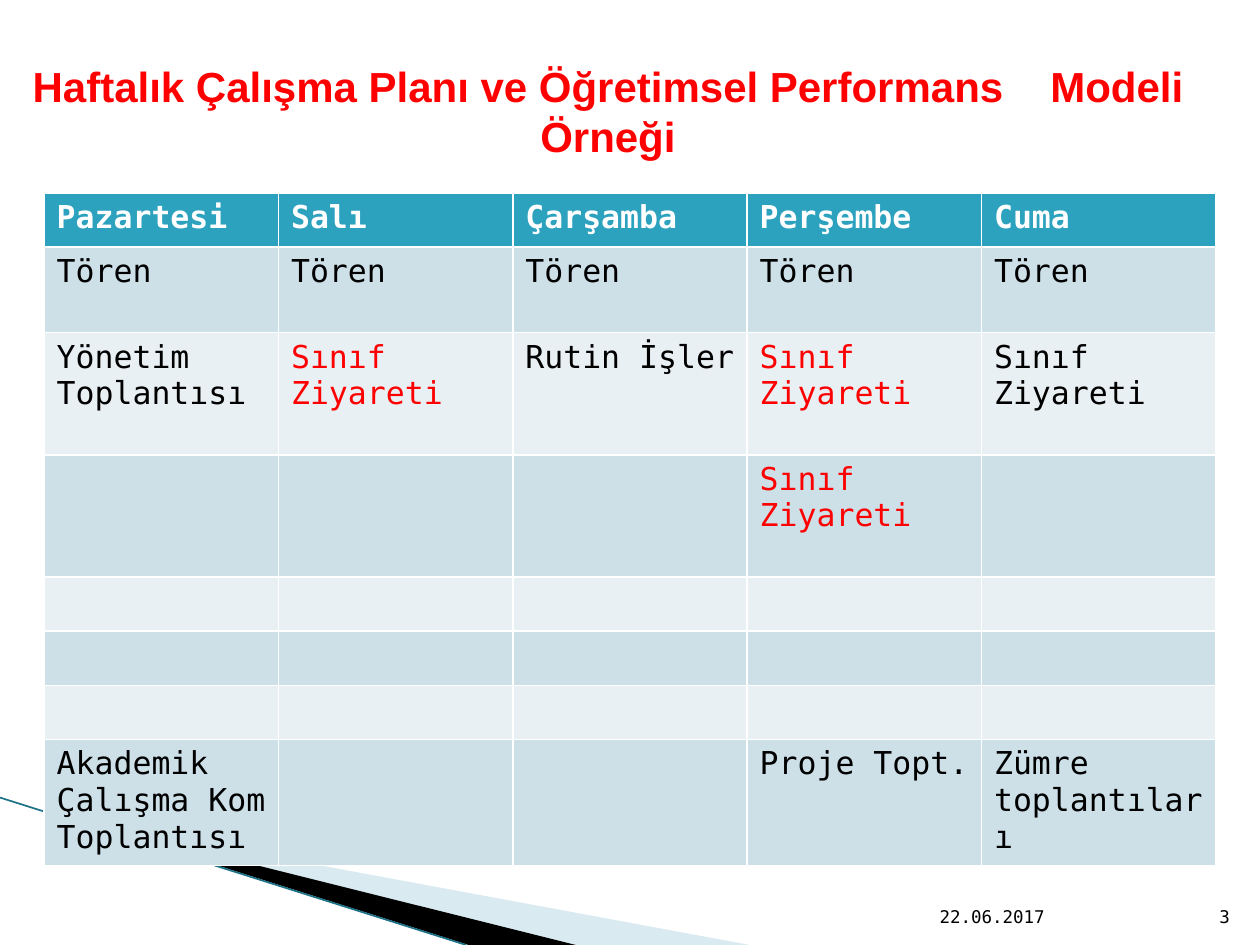
from dataclasses import dataclass

from lxml.etree import SubElement
from pptx import Presentation
from pptx.dml.color import RGBColor
from pptx.enum.shapes import MSO_CONNECTOR
from pptx.enum.text import MSO_ANCHOR, PP_ALIGN
from pptx.oxml.ns import qn
from pptx.util import Inches, Pt


@dataclass(frozen=True)
class Theme:
    header: RGBColor = RGBColor.from_string("2DA2BF")
    band_dark: RGBColor = RGBColor.from_string("CDE0E8")
    band_light: RGBColor = RGBColor.from_string("E8F0F4")
    wedge: RGBColor = RGBColor.from_string("A0CBDC")
    stripe: RGBColor = RGBColor.from_string("1C7186")
    red: RGBColor = RGBColor.from_string("FF0000")
    black: RGBColor = RGBColor.from_string("000000")
    white: RGBColor = RGBColor.from_string("FFFFFF")
    title_font: str = "Arial"
    body_font: str = "DejaVu Sans Mono"
    title_size: Pt = Pt(24)
    table_size: Pt = Pt(18)
    footer_size: Pt = Pt(10)


theme = Theme()


def style(paragraph, font_name, size, color, bold=False, align=PP_ALIGN.LEFT):
    paragraph.alignment = align
    font = paragraph.font
    font.name, font.size, font.bold = font_name, size, bold
    font.color.rgb = color


def add_text(box, text, anchor):
    frame = slide.shapes.add_textbox(*map(Inches, box)).text_frame
    frame.word_wrap = True
    frame.vertical_anchor = anchor
    paragraph = frame.paragraphs[0]
    paragraph.text = text
    return paragraph


presentation = Presentation()
presentation.slide_width, presentation.slide_height = Inches(10), Inches(7.5)
slide = presentation.slides.add_slide(presentation.slide_layouts[6])

# Corner wedges: points, fill, opacity in percent
wedges = [
    ([(0.55, 6.5), (5.95, 7.5), (4.56, 7.5)], theme.wedge, 40),
    ([(0.53, 6.49), (4.57, 7.5), (3.72, 7.5)], theme.black, 100),
]
for points, color, opacity in wedges:
    start, *rest = [(Inches(x), Inches(y)) for x, y in points]
    builder = slide.shapes.build_freeform(*start)
    builder.add_line_segments(rest, close=True)
    wedge = builder.convert_to_shape()
    wedge.shadow.inherit = False
    wedge.fill.solid()
    wedge.fill.fore_color.rgb = color
    wedge.line.fill.background()
    if opacity < 100:
        color_element = next(wedge._element.spPr.iter(qn("a:srgbClr")))
        SubElement(color_element, qn("a:alpha"), val=str(opacity * 1000))

# Corner line
corner_line = slide.shapes.add_connector(
    MSO_CONNECTOR.STRAIGHT, Inches(0), Inches(6.33), Inches(3.7), Inches(7.5))
corner_line.line.color.rgb = theme.stripe
corner_line.line.width = Pt(0.95)
SubElement(corner_line._element.spPr, qn("a:effectLst"))

# Title, with a widened gap before "Modeli"
title = add_text((0, 0.21, 9.65, 1.34),
                 "Haftalık Çalışma Planı ve Öğretimsel Performans", MSO_ANCHOR.MIDDLE)
gap = title.add_run()
gap.text = " "
gap._r.get_or_add_rPr().set("spc", "2000")
title.add_run().text = "Modeli Örneği"
style(title, theme.title_font, theme.title_size, theme.red, True, PP_ALIGN.CENTER)

# Weekly plan
plan = [
    ["Pazartesi", "Salı", "Çarşamba", "Perşembe", "Cuma"],
    ["Tören"] * 5,
    ["Yönetim Toplantısı", "Sınıf Ziyareti", "Rutin İşler", "Sınıf Ziyareti", "Sınıf Ziyareti"],
    ["", "", "", "Sınıf Ziyareti", ""],
    [""] * 5,
    [""] * 5,
    [""] * 5,
    ["Akademik Çalışma Kom Toplantısı", "", "", "Proje Topt.", "Zümre toplantıları"],
]
red_cells = {(2, 1), (2, 3), (3, 3)}
row_heights = [0.43, 0.68, 0.97, 0.97, 0.43, 0.43, 0.43, 0.97]

table = slide.shapes.add_table(
    len(plan), len(plan[0]), Inches(0.35), Inches(1.53),
    Inches(9.3), Inches(sum(row_heights))).table
for row, height in zip(table.rows, row_heights):
    row.height = Inches(height)

for row_index, entries in enumerate(plan):
    is_header = row_index == 0
    band = theme.band_dark if row_index % 2 else theme.band_light
    for column_index, entry in enumerate(entries):
        cell = table.cell(row_index, column_index)
        cell.fill.solid()
        cell.fill.fore_color.rgb = theme.header if is_header else band
        color = theme.white if is_header else theme.black
        if (row_index, column_index) in red_cells:
            color = theme.red
        cell.text = entry
        style(cell.text_frame.paragraphs[0], theme.body_font, theme.table_size, color, is_header)

# Date and slide number
footers = [
    ((7.36, 7.01, 2.1, 0.4), "22.06.2017", PP_ALIGN.LEFT),
    ((9.46, 7.01, 0.4, 0.4), "3", PP_ALIGN.RIGHT),
]
for box, text, align in footers:
    footer = add_text(box, text, MSO_ANCHOR.BOTTOM)
    style(footer, theme.body_font, theme.footer_size, theme.black, align=align)

presentation.save("out.pptx")
